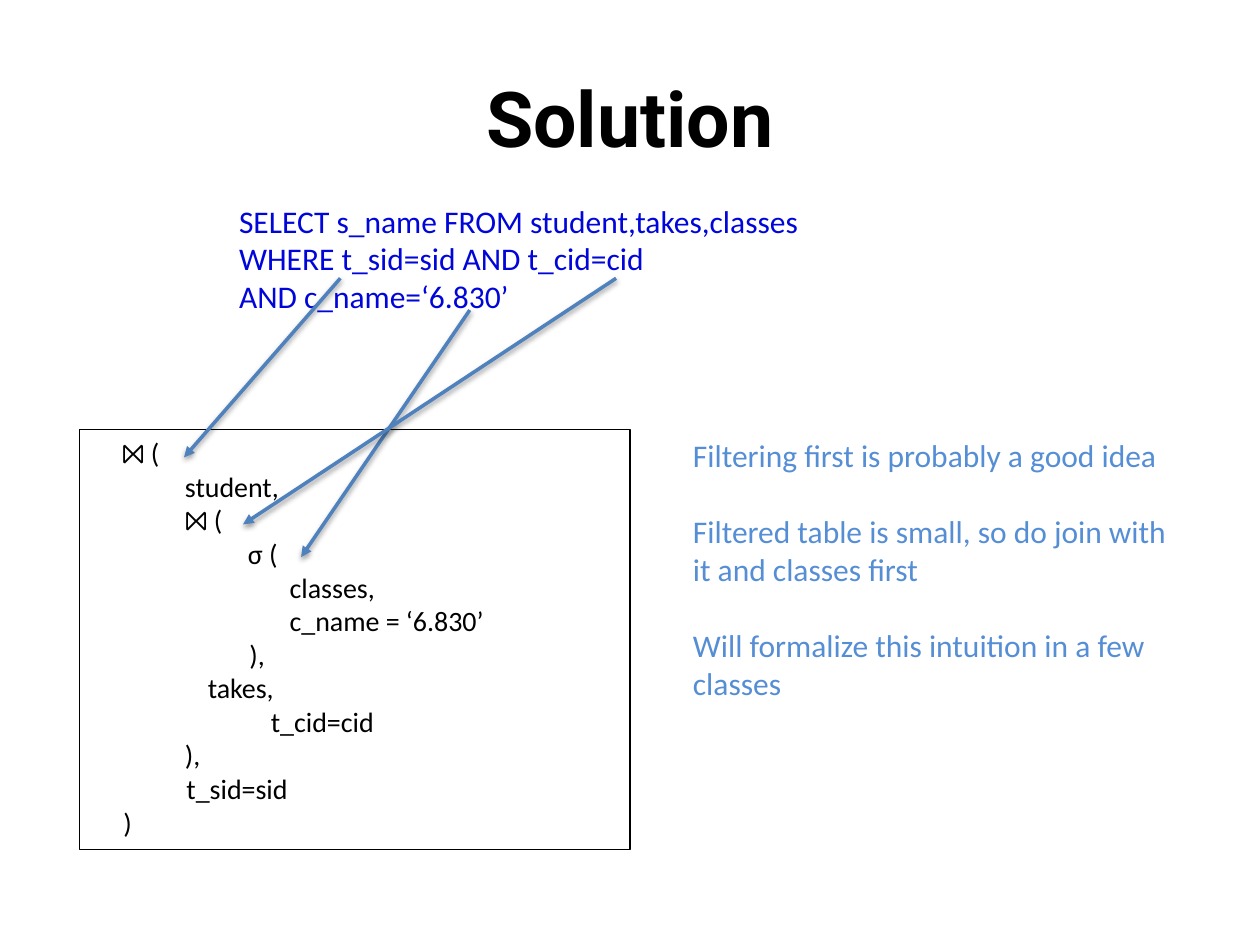
from lxml import etree
from pptx import Presentation
from pptx.dml.color import RGBColor
from pptx.enum.dml import MSO_LINE
from pptx.enum.shapes import MSO_CONNECTOR, MSO_SHAPE
from pptx.enum.text import MSO_ANCHOR, MSO_AUTO_SIZE, PP_ALIGN
from pptx.oxml import parse_xml
from pptx.oxml.ns import nsdecls, qn
from pptx.util import Cm, Pt

STRAIGHT = MSO_CONNECTOR.STRAIGHT
SOLID = MSO_LINE.SOLID
RECTANGLE = MSO_SHAPE.RECTANGLE
TOP, MIDDLE = MSO_ANCHOR.TOP, MSO_ANCHOR.MIDDLE
GROW, FIXED = MSO_AUTO_SIZE.SHAPE_TO_FIT_TEXT, MSO_AUTO_SIZE.NONE
LEFT, CENTER = PP_ALIGN.LEFT, PP_ALIGN.CENTER

BLACK = RGBColor(0x00, 0x00, 0x00)
QUERY_BLUE = RGBColor(0x00, 0x06, 0xDA)
ARROW_BLUE = RGBColor(0x4F, 0x81, 0xBD)
NOTE_BLUE = RGBColor(0x55, 0x8E, 0xD5)

TITLE_FONT = {"name": "Roboto", "size": Pt(44), "bold": True}
QUERY_FONT = {"name": "Calibri", "size": Pt(18)}
PLAN_FONT = {"name": "Calibri", "size": Pt(16)}

QUERY = [
    "SELECT s_name FROM student,takes,classes",
    "WHERE t_sid=sid AND t_cid=cid",
    "AND c_name=‘6.830’",
]
# Plan lines: outline level, indent in cm, text
PLAN = [
    (0, 0.61, "⨝ ("),
    (1, 1.88, "student,"),
    (1, 1.88, "⨝ ("),
    (2, 3.15, "σ ("),
    (5, 3.99, "classes,"),
    (5, 3.99, "c_name = ‘6.830’"),
    (5, 3.18, "),"),
    (3, 2.34, "takes,"),
    (3, 3.61, "t_cid=cid"),
    (1, 1.88, "),"),
    (4, 1.91, "t_sid=sid"),
    (4, 0.64, ")"),
]
NOTES = [
    "Filtering first is probably a good idea",
    "Filtered table is small, so do join with it and classes first",
    "Will formalize this intuition in a few classes",
]
# Each arrow runs from a query condition to its operator: x1, y1, x2, y2 in cm
ARROWS = [
    (9.47, 6.25, 6.07, 11.23),
    (12.42, 5.61, 4.9, 10.57),
    (6.86, 5.61, 3.71, 9.22),
]
SHADOW = (
    f'<a:effectLst {nsdecls("a")}><a:outerShdw blurRad="40000" dist="20000" '
    'dir="5400000" rotWithShape="0"><a:srgbClr val="000000">'
    '<a:alpha val="38000"/></a:srgbClr></a:outerShdw></a:effectLst>'
)


def set_format(target, values):
    for name, value in values.items():
        setattr(target, name, value)


def write_lines(shape, lines, font, color, align=LEFT, gap=Pt(0)):
    """Write one paragraph per line and return the paragraphs."""
    frame = shape.text_frame
    frame.text = "\n".join(lines)
    for index, paragraph in enumerate(frame.paragraphs):
        paragraph.alignment = align
        if index:
            paragraph.space_before = gap
        for run in paragraph.runs:
            set_format(run.font, font)
            run.font.color.rgb = color
    return frame.paragraphs


def add_text(slide, box, lines, font, color, anchor=TOP, auto_size=GROW, **layout):
    shape = slide.shapes.add_textbox(*map(Cm, box))
    write_lines(shape, lines, font, color, **layout)
    set_format(shape.text_frame, {
        "word_wrap": True, "vertical_anchor": anchor, "auto_size": auto_size})


def add_plan(slide, box):
    shape = slide.shapes.add_shape(RECTANGLE, *map(Cm, box))
    shape.shadow.inherit = False
    shape.fill.background()
    shape.line.color.rgb = BLACK
    shape.line.width = Pt(0.75)
    set_format(shape.text_frame, {
        "word_wrap": True, "vertical_anchor": TOP, "auto_size": GROW})
    paragraphs = write_lines(shape, [text for _, _, text in PLAN], PLAN_FONT, BLACK)
    for paragraph, (level, indent, _) in zip(paragraphs, PLAN):
        paragraph.level = level
        properties = paragraph._p.get_or_add_pPr()
        properties.set("marL", str(Cm(indent)))
        properties.set("indent", "0")


def add_arrow(slide, points):
    connector = slide.shapes.add_connector(STRAIGHT, *map(Cm, points))
    set_format(connector.line, {"width": Pt(2), "dash_style": SOLID})
    connector.line.color.rgb = ARROW_BLUE
    properties = connector._element.spPr
    etree.SubElement(properties.find(qn("a:ln")), qn("a:tailEnd"), type="triangle")
    properties.append(parse_xml(SHADOW))


def main():
    presentation = Presentation()
    presentation.slide_width, presentation.slide_height = Cm(25.4), Cm(19.05)
    slide = presentation.slides.add_slide(presentation.slide_layouts[6])

    # Title and query
    add_text(slide, (1.27, 0.76, 22.86, 3.18), ["Solution"], TITLE_FONT, BLACK,
             anchor=MIDDLE, auto_size=FIXED, align=CENTER)
    add_text(slide, (4.57, 3.94, 12.7, 2.57), QUERY, QUERY_FONT, QUERY_BLUE)

    # Query plan with arrows from the conditions
    add_plan(slide, (1.6, 8.66, 11.1, 8.46))
    for points in ARROWS:
        add_arrow(slide, points)

    # Remarks
    add_text(slide, (13.72, 8.66, 10.13, 5.64), NOTES, QUERY_FONT, NOTE_BLUE,
             gap=Pt(22))

    presentation.save("out.pptx")


if __name__ == "__main__":
    main()
